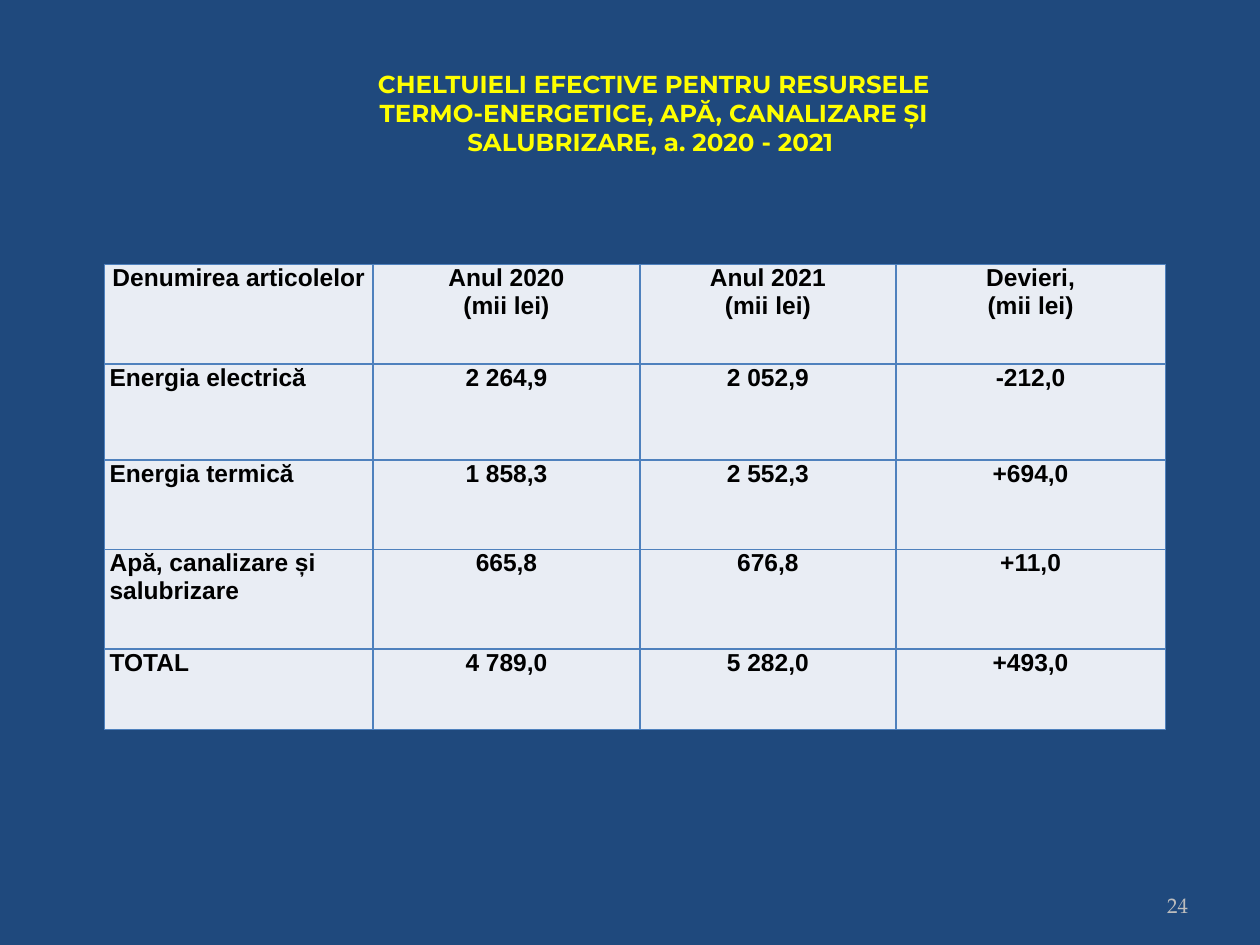
from lxml.etree import SubElement
from pptx import Presentation
from pptx.dml.color import RGBColor
from pptx.enum.text import MSO_ANCHOR as Anchor, PP_ALIGN as Align
from pptx.oxml.ns import qn
from pptx.util import Inches, Pt

NAVY, YELLOW, GREY = "1F497D", "FFFF00", "BDBDBD"
BLACK, PALE, BORDER = "000000", "E9EDF4", "4F81BD"

TITLE = ("CHELTUIELI EFECTIVE PENTRU RESURSELE\v"
         "TERMO-ENERGETICE, APĂ, CANALIZARE ȘI SALUBRIZARE, a. 2020 - 2021 ")
EXPENSES = [
    ["Denumirea articolelor", "Anul 2020\n(mii lei)", "Anul 2021\n(mii lei)", "Devieri,\n(mii lei)"],
    ["Energia electrică", "2 264,9", "2 052,9", "-212,0"],
    ["Energia termică", "1 858,3", "2 552,3", "+694,0"],
    ["Apă, canalizare și salubrizare", "665,8", "676,8", "+11,0"],
    ["TOTAL", "4 789,0", "5 282,0", "+493,0"],
]
COLUMN_WIDTHS = [2.13, 2.12, 2.03, 2.14]
ROW_HEIGHTS = [0.79, 0.76, 0.71, 0.79, 0.64]

TITLE_FONT = {"name": "Montserrat", "size": Pt(14), "bold": True}
NUMBER_FONT = {"name": "TeX Gyre Pagella", "size": Pt(12)}
CELL_FONT = {"name": "Arial", "size": Pt(14), "bold": True}
CELL_MARGINS = {"margin_left": Inches(0.04), "margin_right": Inches(0.04),
                "margin_top": 0, "margin_bottom": 0}


def paint(color, value):
    """Set a colour format from a hex string."""
    color.rgb = RGBColor.from_string(value)


def apply(target, values):
    """Set every attribute in values on target."""
    for name, value in values.items():
        setattr(target, name, value)


def write(frame, text, font, color, align):
    """Fill a text frame with text in one style."""
    frame.text = text
    for paragraph in frame.paragraphs:
        paragraph.alignment = align
        for run in paragraph.runs:
            apply(run.font, font)
            paint(run.font.color, color)


def add_label(slide, box, text, font, color, align, frame_format):
    """Add a wrapped text box."""
    frame = slide.shapes.add_textbox(*map(Inches, box)).text_frame
    apply(frame, {"word_wrap": True, **frame_format})
    write(frame, text, font, color, align)


def add_borders(cell):
    """Draw a thin line on each side of a cell."""
    properties = cell._tc.get_or_add_tcPr()
    for side in ("a:lnL", "a:lnR", "a:lnT", "a:lnB"):
        line = SubElement(properties, qn(side), w=str(Pt(1)))
        fill = SubElement(line, qn("a:solidFill"))
        SubElement(fill, qn("a:srgbClr"), val=BORDER)


def add_expenses(slide, left, top):
    """Add the table of expenses by year."""
    size = map(Inches, (left, top, sum(COLUMN_WIDTHS), sum(ROW_HEIGHTS)))
    table = slide.shapes.add_table(len(ROW_HEIGHTS), len(COLUMN_WIDTHS), *size).table
    for column, width in zip(table.columns, COLUMN_WIDTHS):
        column.width = Inches(width)
    for row, height in zip(table.rows, ROW_HEIGHTS):
        row.height = Inches(height)
    for row, texts in enumerate(EXPENSES):
        for column, text in enumerate(texts):
            cell = table.cell(row, column)
            apply(cell, CELL_MARGINS)
            add_borders(cell)
            cell.fill.solid()
            paint(cell.fill.fore_color, PALE)
            align = Align.LEFT if row and not column else Align.CENTER
            write(cell.text_frame, text, CELL_FONT, BLACK, align)


def main():
    """Build and save the slide."""
    deck = Presentation()
    deck.slide_width, deck.slide_height = Inches(10), Inches(7.5)
    slide = deck.slides.add_slide(deck.slide_layouts[6])
    slide.background.fill.solid()
    paint(slide.background.fill.fore_color, NAVY)
    add_label(slide, (7.35, 6.83, 2.08, 0.5), "24", NUMBER_FONT, GREY, Align.RIGHT,
              {"vertical_anchor": Anchor.BOTTOM, "margin_left": 0, "margin_right": 0})
    add_label(slide, (2.18, 0.52, 6.02, 0.75), TITLE, TITLE_FONT, YELLOW, Align.CENTER,
              {"vertical_anchor": Anchor.MIDDLE})
    add_expenses(slide, 0.83, 2.1)
    deck.save("out.pptx")


if __name__ == "__main__":
    main()
